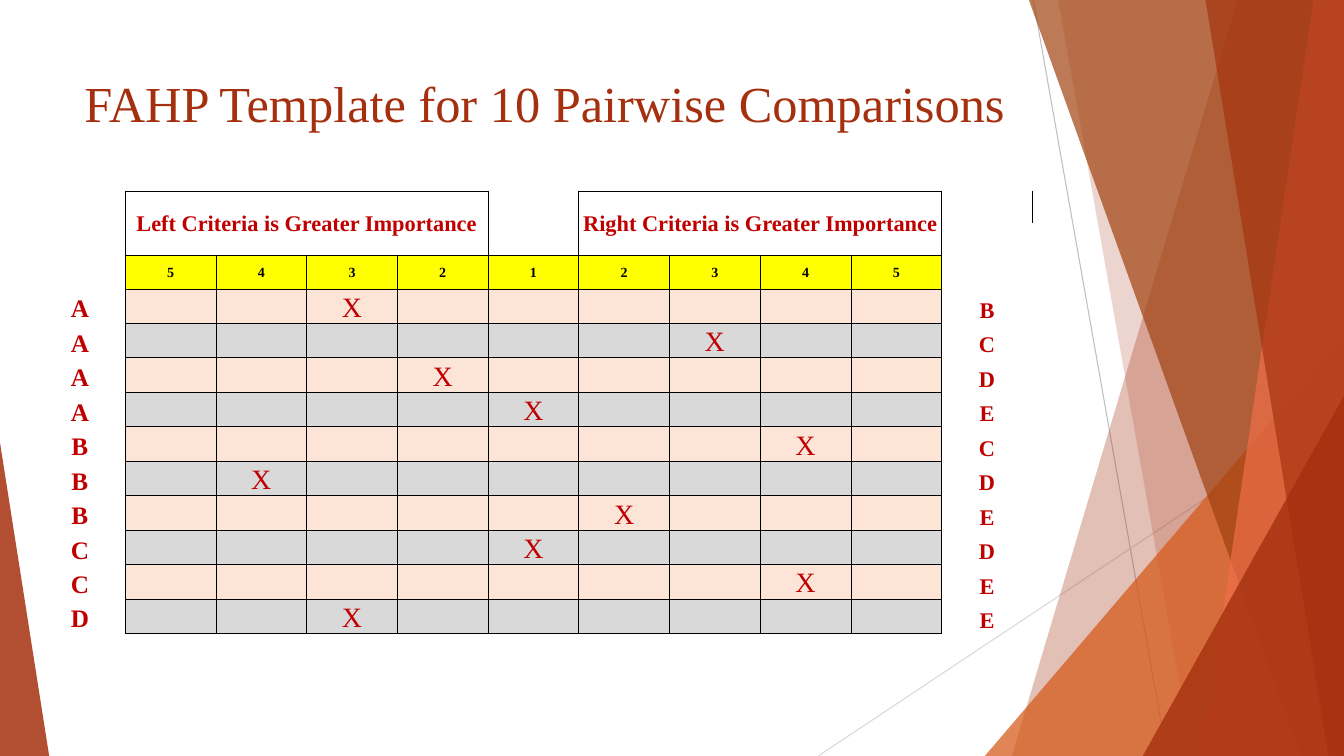
"""Build the FAHP pairwise comparison slide."""
from lxml.etree import SubElement
from pptx import Presentation
from pptx.dml.color import RGBColor
from pptx.enum.shapes import MSO_CONNECTOR as Connector, MSO_SHAPE as Shape
from pptx.enum.text import MSO_ANCHOR as Anchor, PP_ALIGN as Align
from pptx.oxml.ns import qn
from pptx.util import Cm, Pt

COLORS = {
    "rust": "A5300F", "brown": "A04210", "orange": "D55816", "coral": "EE6E4A",
    "steep_line": "BFBFBF", "flat_line": "D9D9D9", "black": "000000",
    "red": "C00000", "yellow": "FFFF00", "peach": "FCE4D6", "grey": "D9D9D9",
}
FONT = "Times New Roman"
WIDTH, HEIGHT = 33.87, 19.05


def style_text(frame, text, size, color, bold=False, align=Align.CENTER):
    """Write one paragraph in the slide's font."""
    para = frame.paragraphs[0]
    para.text = text
    para.alignment = align
    para.font.name = FONT
    para.font.size = Pt(size)
    para.font.bold = bold
    para.font.color.rgb = RGBColor.from_string(COLORS[color])


def boxed(row, column):
    """Tell whether a table position is a framed cell."""
    return 0 <= row <= 12 and 1 <= column <= 9 and not (row < 2 and column == 5)


deck = Presentation()
deck.slide_width, deck.slide_height = Cm(WIDTH), Cm(HEIGHT)
page = deck.slides.add_slide(deck.slide_layouts[6])

for x1, y1, x2, y2, color in [
    (26.04, 0, 29.41, HEIGHT, "steep_line"),
    (WIDTH, 10.24, 20.62, HEIGHT, "flat_line"),
]:
    line = page.shapes.add_connector(Connector.STRAIGHT, Cm(x1), Cm(y1), Cm(x2), Cm(y2))
    line.line.color.rgb = RGBColor.from_string(COLORS[color])
    line.line.width = Pt(0.75)
    SubElement(line._element.spPr, qn("a:effectLst"))

# Bands give top-left and bottom-left x; triangles give left, top, width and apex.
facets = [
    ("band", "rust", 30, (31.19, 25.5)),
    ("band", "rust", 20, (26.67, 30.05)),
    ("triangle", "orange", 72, (24.82, 8.46, 9.05, 1)),
    ("band", "brown", 70, (25.93, 32.79)),
    ("band", "coral", 70, (33.1, 30.28)),
    ("band", "rust", 65, (30.38, 33.48)),
    ("triangle", "rust", 80, (28.8, 9.98, 5.07, 1)),
    ("triangle", "rust", 85, (0, 11.15, 1.24, 0)),
]
for kind, color, opacity, geometry in facets:
    if kind == "band":
        top_x, bottom_x = geometry
        outline = page.shapes.build_freeform(Cm(top_x), Cm(0))
        outline.add_line_segments(
            [(Cm(WIDTH), Cm(0)), (Cm(WIDTH), Cm(HEIGHT)), (Cm(bottom_x), Cm(HEIGHT))])
        facet = outline.convert_to_shape()
    else:
        left, top, width, apex = geometry
        facet = page.shapes.add_shape(
            Shape.ISOSCELES_TRIANGLE, Cm(left), Cm(top), Cm(width), Cm(HEIGHT - top))
        facet.adjustments[0] = apex
    facet.shadow.inherit = False
    facet.line.fill.background()
    facet.fill.solid()
    facet.fill.fore_color.rgb = RGBColor.from_string(COLORS[color])
    tint = facet._element.spPr.find(qn("a:solidFill"))[0]
    SubElement(tint, qn("a:alpha"), val=str(opacity * 1000))

title = page.shapes.add_textbox(Cm(1.88), Cm(1.7), Cm(23.88), Cm(3.66))
title.text_frame.word_wrap = True
style_text(title.text_frame, "FAHP Template for 10 Pairwise Comparisons", 36, "rust",
           align=Align.LEFT)

scale = ["5", "4", "3", "2", "1", "2", "3", "4", "5"]
comparisons = [
    ("A", "B", 3), ("A", "C", 7), ("A", "D", 4), ("A", "E", 5), ("B", "C", 8),
    ("B", "D", 2), ("B", "E", 6), ("C", "D", 5), ("C", "E", 8), ("D", "E", 3),
]
frame = page.shapes.add_table(13, 11, Cm(0.87), Cm(4.81), Cm(25.15), Cm(10.97))
table = frame.table
table.first_row = table.horz_banding = False
table._tbl.tblPr.find(qn("a:tableStyleId")).text = "{2D5ABB26-0587-4C30-8999-92F81FD0307C}"
for column in table.columns:
    column.width = Cm(2.286)
for number, row in enumerate(table.rows):
    row.height = Cm(0.81 if number < 2 else 0.85)

sides = [("a:lnL", 0, -1), ("a:lnR", 0, 1), ("a:lnT", -1, 0), ("a:lnB", 1, 0)]
for row in range(13):
    for column in range(11):
        cell = table.cell(row, column)
        cell.margin_left = cell.margin_right = cell.margin_top = Cm(0.02)
        cell.margin_bottom = 0
        cell.vertical_anchor = Anchor.MIDDLE if row < 3 else Anchor.BOTTOM
        for tag, down, across in sides:
            if boxed(row, column) or boxed(row + down, column + across):
                border = SubElement(cell._tc.get_or_add_tcPr(), qn(tag), w=str(Pt(0.5)))
                ink = SubElement(border, qn("a:solidFill"))
                SubElement(ink, qn("a:srgbClr"), val=COLORS["black"])
        if row >= 2 and boxed(row, column):
            color = "yellow" if row == 2 else ("grey", "peach")[row % 2]
            cell.fill.solid()
            cell.fill.fore_color.rgb = RGBColor.from_string(COLORS[color])
        else:
            cell.fill.background()

for column, side in [(1, "Left"), (6, "Right")]:
    heading = table.cell(0, column)
    heading.merge(table.cell(1, column + 3))
    style_text(heading.text_frame, f"{side} Criteria is Greater Importance", 16, "red", True)
for column, grade in enumerate(scale, 1):
    style_text(table.cell(2, column).text_frame, grade, 10, "black", True)
for row, (left_name, right_name, mark) in enumerate(comparisons, 3):
    style_text(table.cell(row, 0).text_frame, left_name, 18, "red", True)
    style_text(table.cell(row, mark).text_frame, "X", 20, "red")
    style_text(table.cell(row, 10).text_frame, right_name, 16, "red", True)

deck.save("out.pptx")
